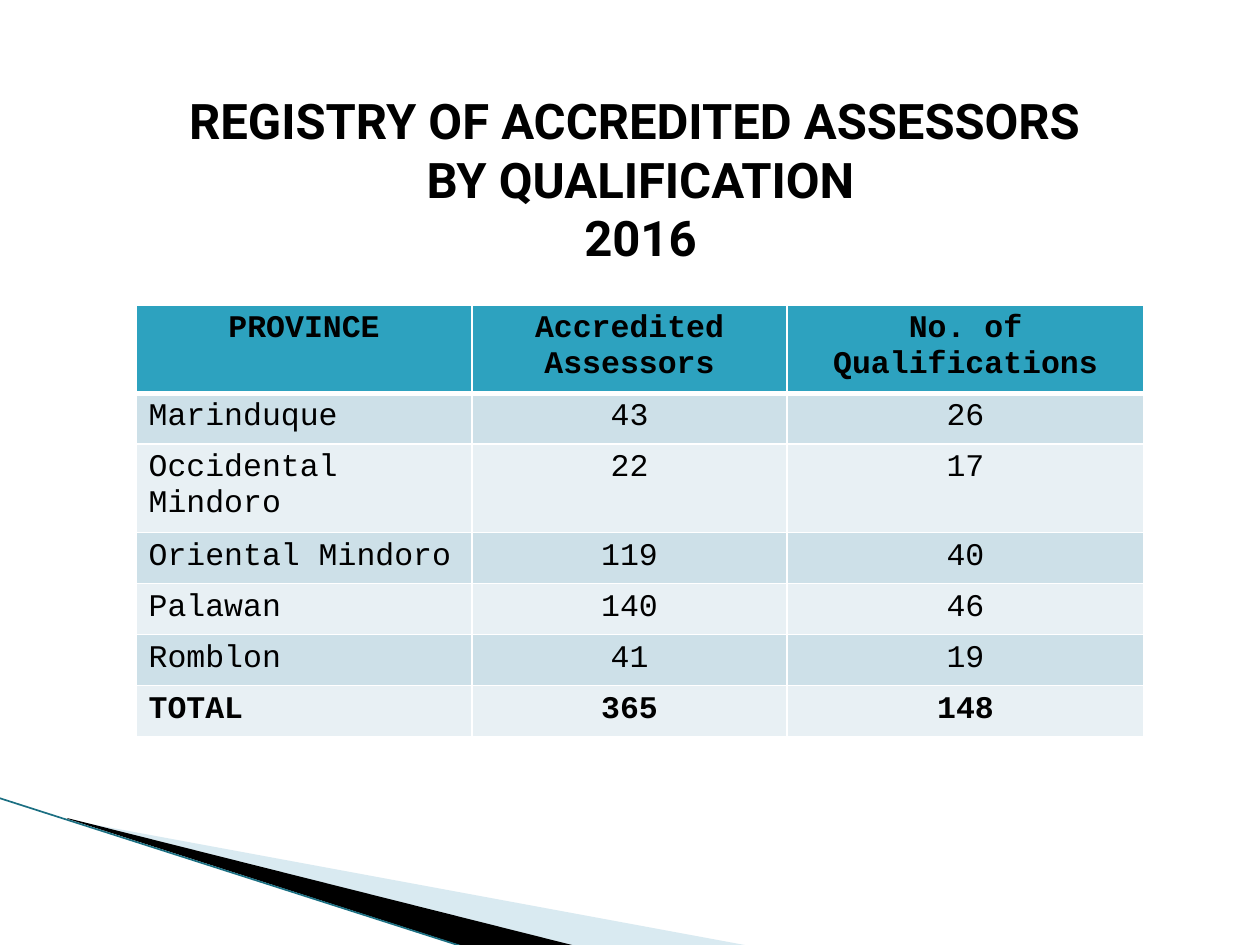
"""Builds the slide on accredited assessors by qualification."""
from lxml import etree
from pptx import Presentation
from pptx.dml.color import RGBColor
from pptx.enum.shapes import MSO_CONNECTOR
from pptx.enum.text import MSO_ANCHOR, PP_ALIGN
from pptx.oxml.ns import qn
from pptx.util import Emu, Pt

LEFT, CENTER = PP_ALIGN.LEFT, PP_ALIGN.CENTER
MIDDLE = MSO_ANCHOR.MIDDLE
STRAIGHT = MSO_CONNECTOR.STRAIGHT
COLORS = {
    "text": "000000",
    "header": "2DA2BF",
    "band": "CDE0E8",
    "light": "E8F0F4",
    "border": "FFFFFF",
    "pale": "A0CBDC",
    "dark": "000000",
    "edge": "1B6F82",
}
ROWS = [
    ("PROVINCE", "Accredited Assessors", "No. of Qualifications"),
    ("Marinduque", "43", "26"),
    ("Occidental Mindoro", "22", "17"),
    ("Oriental Mindoro", "119", "40"),
    ("Palawan", "140", "46"),
    ("Romblon", "41", "19"),
    ("TOTAL", "365", "148"),
]
COLUMN_WIDTHS = [336, 315, 357]
ROW_HEIGHTS = [84, 51, 84, 51, 51, 51, 51]
WEDGES = [
    ("pale", 40, [(69, 820), (750, 946), (575, 946), (69, 819)]),
    ("dark", 100, [(67, 818), (576, 946), (469, 948), (68, 819)]),
]


def px(length):
    return Emu(round(length * 914400 / 126))


def style(para, name, size, bold, align):
    para.alignment = align
    para.font.name = name
    para.font.size = Pt(size)
    para.font.bold = bold
    para.font.color.rgb = RGBColor.from_string(COLORS["text"])


deck = Presentation()
deck.slide_width, deck.slide_height = px(1260), px(945)
page = deck.slides.add_slide(deck.slide_layouts[6])

for color, opacity, points in WEDGES:
    corners = [(px(x), px(y)) for x, y in points]
    builder = page.shapes.build_freeform(*corners[0], scale=1.0)
    builder.add_line_segments(corners[1:], close=True)
    wedge = builder.convert_to_shape()
    wedge.shadow.inherit = False
    wedge.line.fill.background()
    wedge.fill.solid()
    wedge.fill.fore_color.rgb = RGBColor.from_string(COLORS[color])
    if opacity < 100:
        tint = next(wedge.element.spPr.iter(qn("a:srgbClr")))
        etree.SubElement(tint, qn("a:alpha"), val=str(opacity * 1000))

edge = page.shapes.add_connector(STRAIGHT, px(-1), px(798), px(467), px(948))
edge.line.color.rgb = RGBColor.from_string(COLORS["edge"])
edge.line.width = Pt(0.95)
etree.SubElement(edge.element.spPr, qn("a:effectLst"))

title = page.shapes.add_textbox(px(42), px(105), px(1197), px(147))
frame = title.text_frame
frame.word_wrap = True
frame.vertical_anchor = MIDDLE
frame.text = "REGISTRY OF ACCREDITED ASSESSORS \vBY QUALIFICATION\v2016"
style(frame.paragraphs[0], "Roboto", 28, True, CENTER)

table = page.shapes.add_table(
    len(ROWS), len(COLUMN_WIDTHS), px(136), px(305),
    px(sum(COLUMN_WIDTHS)), px(sum(ROW_HEIGHTS)),
).table
table.first_row = False
table.horz_banding = False
for column, width in zip(table.columns, COLUMN_WIDTHS):
    column.width = px(width)
for row, height in zip(table.rows, ROW_HEIGHTS):
    row.height = px(height)

for row_index, values in enumerate(ROWS):
    is_header = row_index == 0
    bold = is_header or values[0] == "TOTAL"
    fill = "header" if is_header else "band" if row_index % 2 else "light"
    for column_index, value in enumerate(values):
        cell = table.cell(row_index, column_index)
        cell.text = value
        align = CENTER if is_header or column_index else LEFT
        style(cell.text_frame.paragraphs[0], "Courier New", 18, bold, align)
        cell.fill.solid()
        cell.fill.fore_color.rgb = RGBColor.from_string(COLORS[fill])
        properties = cell._tc.get_or_add_tcPr()
        for position, side in enumerate(("lnL", "lnR", "lnT", "lnB")):
            thick = (row_index, side) in ((0, "lnB"), (1, "lnT"))
            border = etree.Element(qn(f"a:{side}"), w=str(Pt(3 if thick else 1)))
            paint = etree.SubElement(border, qn("a:solidFill"))
            etree.SubElement(paint, qn("a:srgbClr"), val=COLORS["border"])
            properties.insert(position, border)

deck.save("out.pptx")
